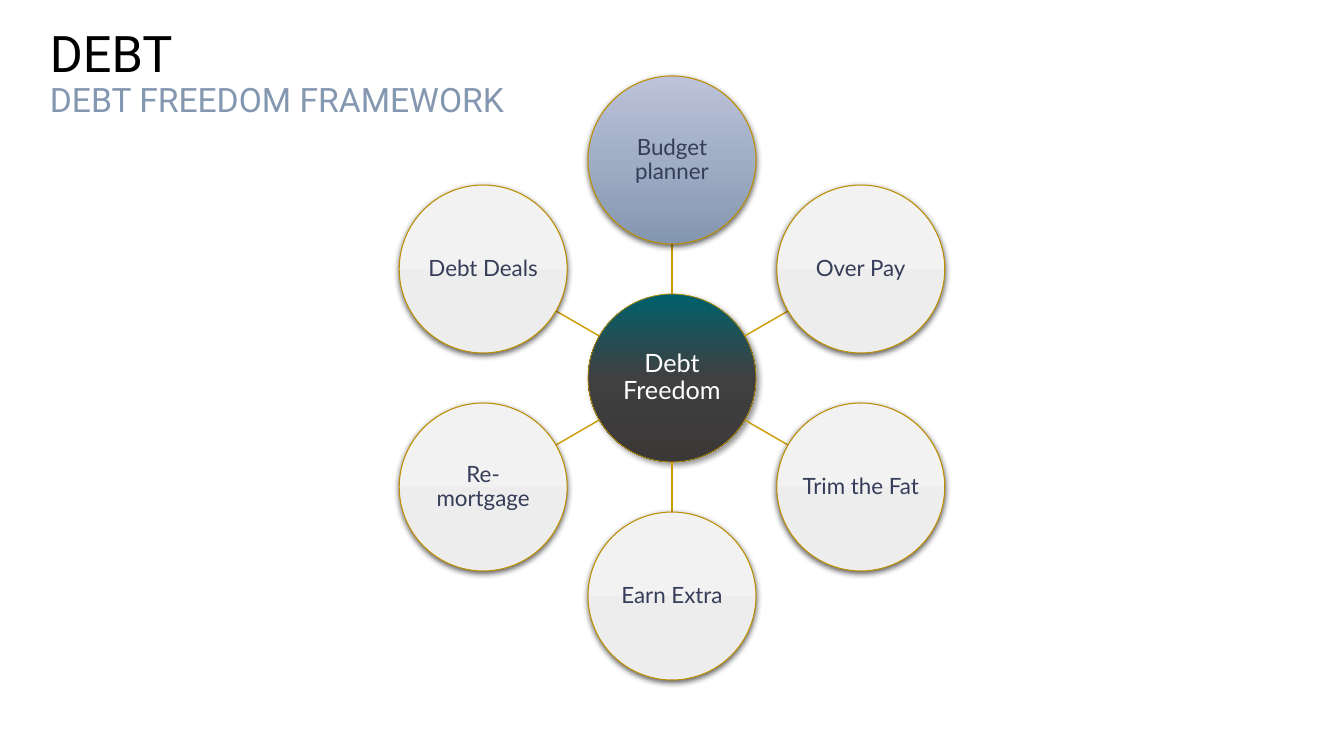
import math

from lxml import etree
from pptx import Presentation
from pptx.dml.color import RGBColor
from pptx.enum.shapes import MSO_CONNECTOR, MSO_SHAPE
from pptx.enum.text import MSO_ANCHOR, PP_ALIGN
from pptx.oxml.ns import qn
from pptx.util import Emu, Pt

STRAIGHT = MSO_CONNECTOR.STRAIGHT
OVAL = MSO_SHAPE.OVAL
MIDDLE = MSO_ANCHOR.MIDDLE
CENTER = PP_ALIGN.CENTER

EMU_PER_PX = 914400 / 100.8
SLIDE_WIDTH, SLIDE_HEIGHT = 1344, 756
CENTER_X, CENTER_Y = 672, 378
RADIUS, ORBIT = 84, 218

HUB_STOPS = [(0, "00606B"), (50, "404040"), (100, "3B3838")]
BLUE_STOPS = [(0, "BCC3DA"), (100, "8497B0")]
GREY_STOPS = [(0, "F2F2F2"), (100, "EDEDED")]
# Shadow: opacity %, blur pt, distance pt, direction in degrees
HUB_SHADOW = (40, 4, 3, 45)
STEP_SHADOW = (63, 4.5, 1.5, 90)

# Clockwise from the top
STEPS = ["Budget planner", "Over Pay", "Trim the Fat",
         "Earn Extra", "Re-mortgage", "Debt Deals"]


def px(length):
    return Emu(round(length * EMU_PER_PX))


def color(hex_string):
    return RGBColor.from_string(hex_string)


def add_element(parent, tag, **attributes):
    values = {name: str(value) for name, value in attributes.items()}
    return etree.SubElement(parent, qn(tag), values)


class FrameworkSlide:
    body_font = "Lato"
    title_font = "Roboto"
    outline = "BD8E00"
    spoke_color = "CC9A00"

    def __init__(self, presentation):
        self.slide = presentation.slides.add_slide(presentation.slide_layouts[6])

    def style_paragraph(self, paragraph, text, font, size, hex_string):
        paragraph.text = text
        paragraph.line_spacing = 0.9
        paragraph.font.name = font
        paragraph.font.size = Pt(size)
        paragraph.font.color.rgb = color(hex_string)

    def gradient(self, shape, stops):
        shape.fill.gradient()
        shape.fill.gradient_angle = 270
        stop_list = shape._element.spPr.find(".//" + qn("a:gsLst"))
        stop_list.clear()
        for position, hex_string in stops:
            stop = add_element(stop_list, "a:gs", pos=position * 1000)
            add_element(stop, "a:srgbClr", val=hex_string)

    def shadow(self, shape, opacity, blur, distance, direction):
        shape.shadow.inherit = False
        effects = shape._element.spPr.find(qn("a:effectLst"))
        outer = add_element(effects, "a:outerShdw", blurRad=Pt(blur), dist=Pt(distance),
                            dir=direction * 60000, algn="ctr", rotWithShape=0)
        black = add_element(outer, "a:srgbClr", val="000000")
        add_element(black, "a:alpha", val=opacity * 1000)

    def circle(self, x, y, text, stops, shadow, line_width, size, text_color):
        shape = self.slide.shapes.add_shape(
            OVAL, px(x - RADIUS), px(y - RADIUS), px(2 * RADIUS), px(2 * RADIUS))
        self.gradient(shape, stops)
        shape.line.color.rgb = color(self.outline)
        shape.line.width = Pt(line_width)
        self.shadow(shape, *shadow)
        frame = shape.text_frame
        frame.word_wrap = True
        frame.vertical_anchor = MIDDLE
        frame.margin_left = frame.margin_right = px(1)
        frame.margin_top = frame.margin_bottom = px(1)
        paragraph = frame.paragraphs[0]
        self.style_paragraph(paragraph, text, self.body_font, size, text_color)
        paragraph.alignment = CENTER

    def spoke(self, start, end):
        connector = self.slide.shapes.add_connector(
            STRAIGHT, *map(px, start), *map(px, end))
        connector.line.color.rgb = color(self.spoke_color)
        connector.line.width = Pt(1)
        add_element(connector._element.spPr, "a:effectLst")

    def heading(self, x, y, width, height, lines):
        box = self.slide.shapes.add_textbox(px(x), px(y), px(width), px(height))
        frame = box.text_frame
        frame.word_wrap = True
        frame.vertical_anchor = MIDDLE
        for index, (text, size, hex_string) in enumerate(lines):
            paragraph = frame.add_paragraph() if index else frame.paragraphs[0]
            self.style_paragraph(paragraph, text, self.title_font, size, hex_string)


def around_hub(angle, distance):
    return (CENTER_X + distance * math.cos(angle),
            CENTER_Y + distance * math.sin(angle))


def main():
    presentation = Presentation()
    presentation.slide_width = px(SLIDE_WIDTH)
    presentation.slide_height = px(SLIDE_HEIGHT)
    page = FrameworkSlide(presentation)

    # Hub
    page.circle(CENTER_X, CENTER_Y, "Debt Freedom", HUB_STOPS, HUB_SHADOW,
                0.5, 18, "FFFFFF")

    # Steps around the hub, each with its spoke
    for index, step in enumerate(STEPS):
        angle = math.radians(index * 360 / len(STEPS) - 90)
        page.spoke(around_hub(angle, RADIUS), around_hub(angle, ORBIT - RADIUS))
        stops = GREY_STOPS if index else BLUE_STOPS
        page.circle(*around_hub(angle, ORBIT), step, stops, STEP_SHADOW,
                    0.75, 16, "353D59")

    # Title and subtitle
    page.heading(40, 34, 1027, 81, [("DEBT", 36, "000000"),
                                    ("DEBT FREEDOM FRAMEWORK", 24, "8497B0")])

    presentation.save("out.pptx")


if __name__ == "__main__":
    main()
